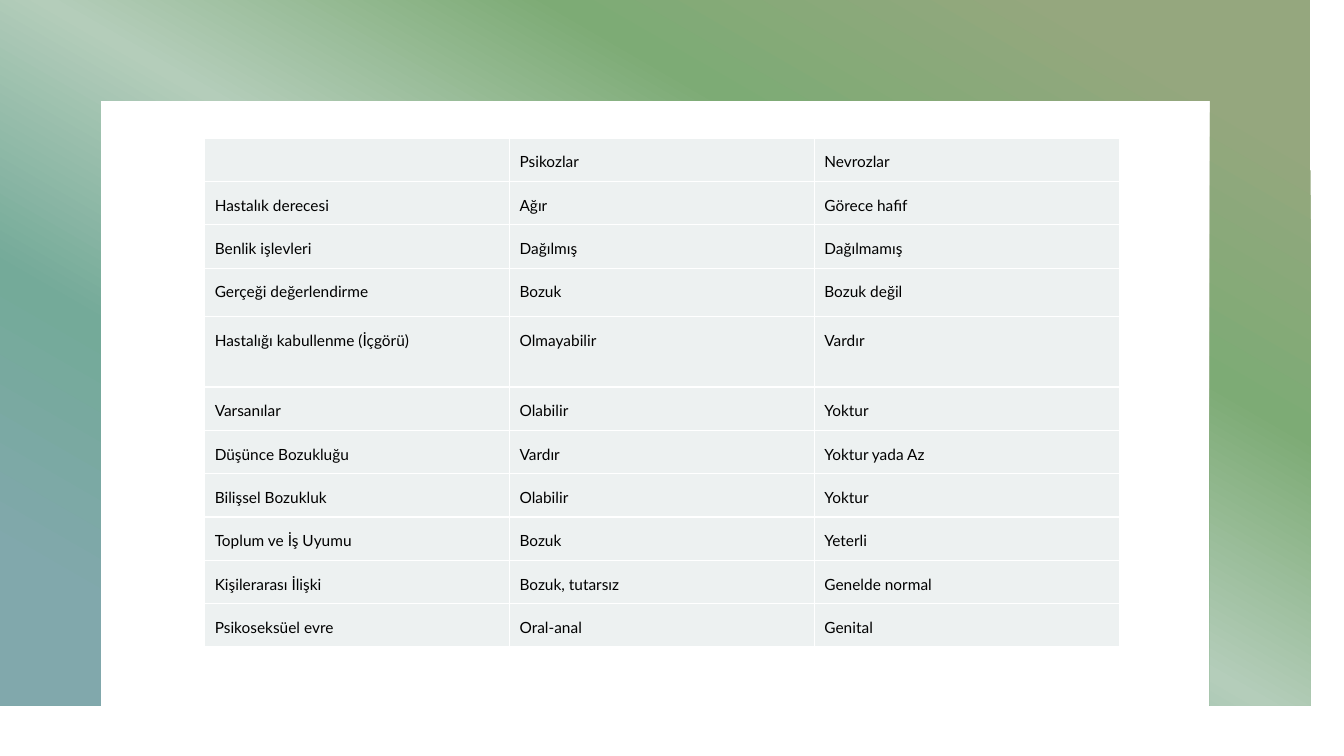
from lxml import etree
from pptx import Presentation
from pptx.dml.color import RGBColor
from pptx.enum.text import PP_ALIGN
from pptx.oxml.ns import qn
from pptx.util import Inches, Pt

WHITE = RGBColor(0xFF, 0xFF, 0xFF)
BLACK = RGBColor(0, 0, 0)
CELL_GREY = RGBColor(0xED, 0xF1, 0xF1)
FRAME_STOPS = [
    (10, RGBColor(0x95, 0xA7, 0x7E)),
    (30, RGBColor(0x7D, 0xAB, 0x75)),
    (50, RGBColor(0xB4, 0xCD, 0xBA)),
    (70, RGBColor(0x74, 0xAA, 0x99)),
    (90, RGBColor(0x81, 0xA8, 0xAC)),
]
FRAME_ANGLE = 120
FONT = "Lato"

COMPARISON = [
    ("", "Psikozlar", "Nevrozlar"),
    ("Hastalık derecesi", "Ağır", "Görece hafif"),
    ("Benlik işlevleri", "Dağılmış", "Dağılmamış"),
    ("Gerçeği değerlendirme", "Bozuk", "Bozuk değil"),
    ("Hastalığı kabullenme (İçgörü)", "Olmayabilir", "Vardır"),
    ("Varsanılar", "Olabilir", "Yoktur"),
    ("Düşünce Bozukluğu", "Vardır", "Yoktur yada Az"),
    ("Bilişsel Bozukluk", "Olabilir", "Yoktur"),
    ("Toplum ve İş Uyumu", "Bozuk", "Yeterli"),
    ("Kişilerarası İlişki", "Bozuk, tutarsız", "Genelde normal"),
    ("Psikoseksüel evre", "Oral-anal", "Genital"),
]
ROW_HEIGHT = 0.43
TALL_ROWS = {3: 0.48, 4: 0.7}


def add_solid_fill(parent, color):
    solid = etree.SubElement(parent, qn("a:solidFill"))
    etree.SubElement(solid, qn("a:srgbClr"), val=str(color))


def set_gradient(shape, stops, angle):
    """Fill the shape with stops of (percent, colour), angle in clockwise degrees."""
    shape.fill.gradient()
    gradient = shape.fill._xPr.find(qn("a:gradFill"))
    for child in list(gradient):
        gradient.remove(child)
    stop_list = etree.SubElement(gradient, qn("a:gsLst"))
    for percent, color in stops:
        stop = etree.SubElement(stop_list, qn("a:gs"), pos=str(percent * 1000))
        etree.SubElement(stop, qn("a:srgbClr"), val=str(color))
    etree.SubElement(gradient, qn("a:lin"), ang=str(angle * 60000), scaled="0")


def add_frame(slide, left, top, width, height, border):
    """Draw a gradient frame that is open at the bottom."""
    right, bottom = left + width, top + height
    inner_left, inner_right, inner_top = left + border, right - border, top + border
    outline = slide.shapes.build_freeform(left, top, scale=Inches(1))
    outline.add_line_segments([
        (right, top), (right, bottom), (inner_right, bottom), (inner_right, inner_top),
        (inner_left, inner_top), (inner_left, bottom), (left, bottom),
    ], close=True)
    frame = outline.convert_to_shape()
    frame.shadow.inherit = False
    frame.line.fill.background()
    set_gradient(frame, FRAME_STOPS, FRAME_ANGLE)


def format_cell(cell, text):
    properties = cell._tc.get_or_add_tcPr()
    for side in ("a:lnL", "a:lnR", "a:lnT", "a:lnB"):
        border = etree.SubElement(properties, qn(side), w=str(Pt(1)))
        add_solid_fill(border, WHITE)
    cell.fill.solid()
    cell.fill.fore_color.rgb = CELL_GREY
    if not text:
        return
    paragraph = cell.text_frame.paragraphs[0]
    paragraph.alignment = PP_ALIGN.JUSTIFY
    paragraph.line_spacing = 1.5
    paragraph.space_after = Pt(8)
    run = paragraph.add_run()
    run.text = text
    run.font.name = FONT
    run.font.size = Pt(11)
    run.font.color.rgb = BLACK


def add_comparison(slide, left, top, width):
    heights = [TALL_ROWS.get(i, ROW_HEIGHT) for i in range(len(COMPARISON))]
    column_count = len(COMPARISON[0])
    table = slide.shapes.add_table(
        len(COMPARISON), column_count,
        Inches(left), Inches(top), Inches(width), Inches(sum(heights)),
    ).table
    for column in table.columns:
        column.width = Inches(width / column_count)
    for row, height, texts in zip(table.rows, heights, COMPARISON):
        row.height = Inches(height)
        for cell, text in zip(row.cells, texts):
            format_cell(cell, text)


def main():
    presentation = Presentation()
    presentation.slide_width = Inches(13.33)
    presentation.slide_height = Inches(7.5)
    slide = presentation.slides.add_slide(presentation.slide_layouts[6])
    slide.background.fill.solid()
    slide.background.fill.fore_color.rgb = WHITE
    add_frame(slide, 0, 0, 13.33, 6.68, border=0.84)
    add_comparison(slide, 2.03, 1.37, 9.07)
    presentation.save("out.pptx")


if __name__ == "__main__":
    main()
